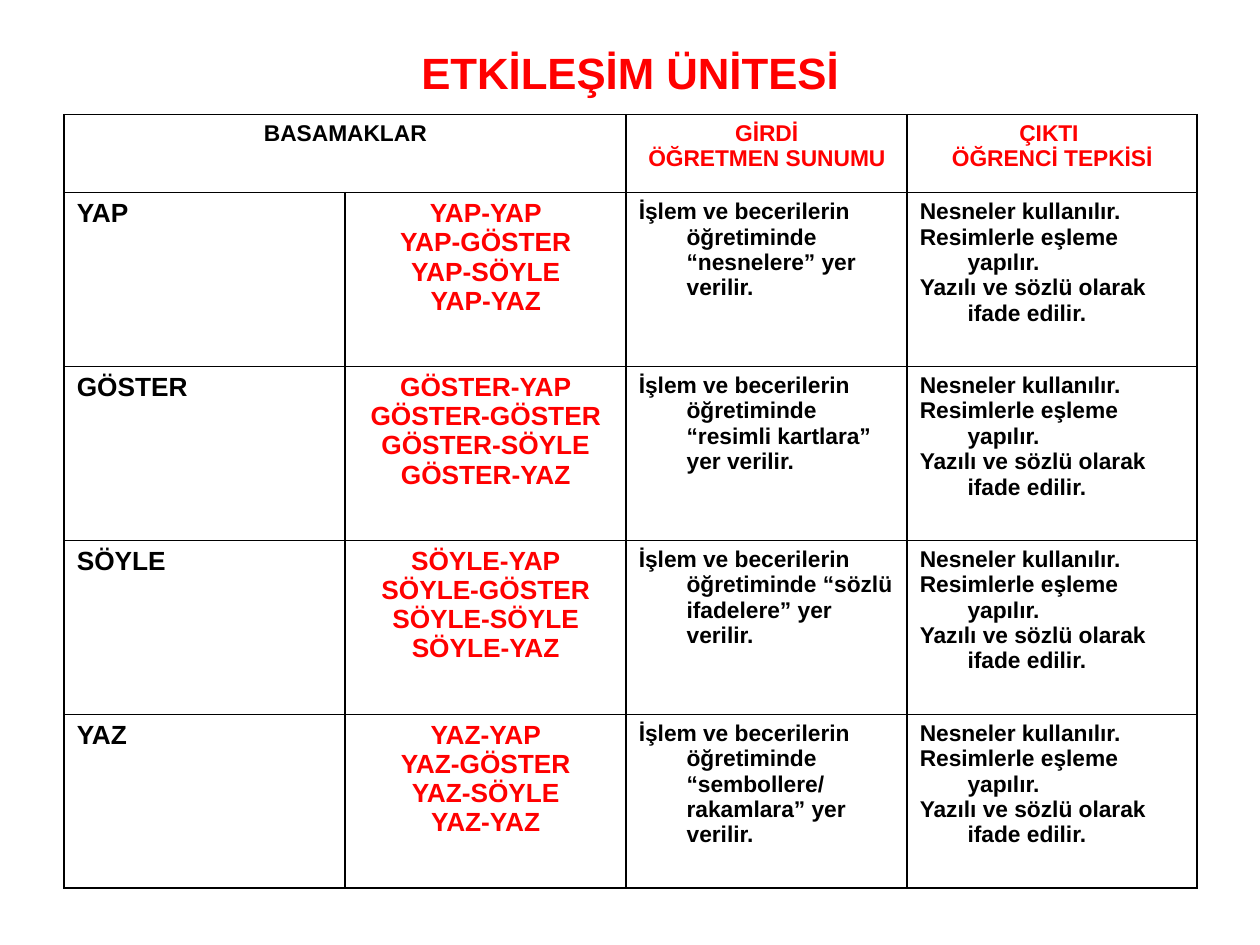
from lxml import etree
from pptx import Presentation
from pptx.dml.color import RGBColor
from pptx.enum.text import MSO_ANCHOR, PP_ALIGN
from pptx.oxml.ns import qn
from pptx.util import Inches, Pt

LEFT, CENTER = PP_ALIGN.LEFT, PP_ALIGN.CENTER
MIDDLE = MSO_ANCHOR.MIDDLE
RED, BLACK = "FF0000", "000000"
SMALL, LARGE = 13, 15
HANGING = Inches(0.38)
COLUMNS = [2.23, 2.23, 2.23, 2.3]
ROWS = [0.62] + [1.38] * 4
STEPS = ["YAP", "GÖSTER", "SÖYLE", "YAZ"]
MATERIALS = ["“nesnelere”", "“resimli kartlara”", "“sözlü ifadelere”",
             "“sembollere/ rakamlara”"]
RESPONSES = ["Nesneler kullanılır.", "Resimlerle eşleme yapılır.",
             "Yazılı ve sözlü olarak ifade edilir."]


def color(value):
    return RGBColor.from_string(value)


def style_paragraph(para, text, size, ink, align):
    para.text = text
    para.alignment = align
    font = para.font
    font.name, font.size, font.bold = "Arial", Pt(size), True
    font.color.rgb = color(ink)


def add_title(page, text):
    box = page.shapes.add_textbox(Inches(0.5), Inches(0.3), Inches(9), Inches(0.61))
    frame = box.text_frame
    frame.word_wrap = True
    frame.vertical_anchor = MIDDLE
    para = frame.paragraphs[0]
    style_paragraph(para, text, 25, RED, CENTER)
    para.line_spacing = 0.85


def format_cell(cell):
    properties = cell._tc.get_or_add_tcPr()
    for side in ("lnL", "lnR", "lnT", "lnB"):
        line = etree.SubElement(properties, qn(f"a:{side}"), w=str(Pt(1)))
        fill = etree.SubElement(line, qn("a:solidFill"))
        etree.SubElement(fill, qn("a:srgbClr"), val=BLACK)
    cell.fill.background()


def fill_cell(cell, lines, size, ink, align):
    frame = cell.text_frame
    for index, text in enumerate(lines):
        para = frame.add_paragraph() if index else frame.paragraphs[0]
        properties = para._p.get_or_add_pPr()
        properties.set("marL", str(HANGING))
        properties.set("indent", str(-HANGING))
        style_paragraph(para, text, size, ink, align)


def add_grid(page):
    frame = page.shapes.add_table(len(ROWS), len(COLUMNS), Inches(0.51), Inches(0.91),
                                  Inches(sum(COLUMNS)), Inches(sum(ROWS)))
    table = frame.table
    table.first_row = table.horz_banding = False
    for column, width in zip(table.columns, COLUMNS):
        column.width = Inches(width)
    for row, height in zip(table.rows, ROWS):
        row.height = Inches(height)
    for cell in table.iter_cells():
        format_cell(cell)
    table.cell(0, 0).merge(table.cell(0, 1))
    return table


def fill_header(table):
    fill_cell(table.cell(0, 0), ["BASAMAKLAR"], SMALL, BLACK, CENTER)
    fill_cell(table.cell(0, 2), ["GİRDİ", "ÖĞRETMEN SUNUMU"], SMALL, RED, CENTER)
    fill_cell(table.cell(0, 3), ["ÇIKTI ", "ÖĞRENCİ TEPKİSİ"], SMALL, RED, CENTER)


def fill_step(table, row, step, material):
    pairs = [f"{step}-{reply}" for reply in STEPS]
    teaching = f"İşlem ve becerilerin öğretiminde {material} yer verilir."
    fill_cell(table.cell(row, 0), [step], LARGE, BLACK, LEFT)
    fill_cell(table.cell(row, 1), pairs, LARGE, RED, CENTER)
    fill_cell(table.cell(row, 2), [teaching], SMALL, BLACK, LEFT)
    fill_cell(table.cell(row, 3), RESPONSES, SMALL, BLACK, LEFT)


def main():
    deck = Presentation()
    deck.slide_width, deck.slide_height = Inches(10), Inches(7.5)
    page = deck.slides.add_slide(deck.slide_layouts[6])
    add_title(page, "ETKİLEŞİM ÜNİTESİ")
    table = add_grid(page)
    fill_header(table)
    for row, (step, material) in enumerate(zip(STEPS, MATERIALS), start=1):
        fill_step(table, row, step, material)
    deck.save("out.pptx")


if __name__ == "__main__":
    main()
